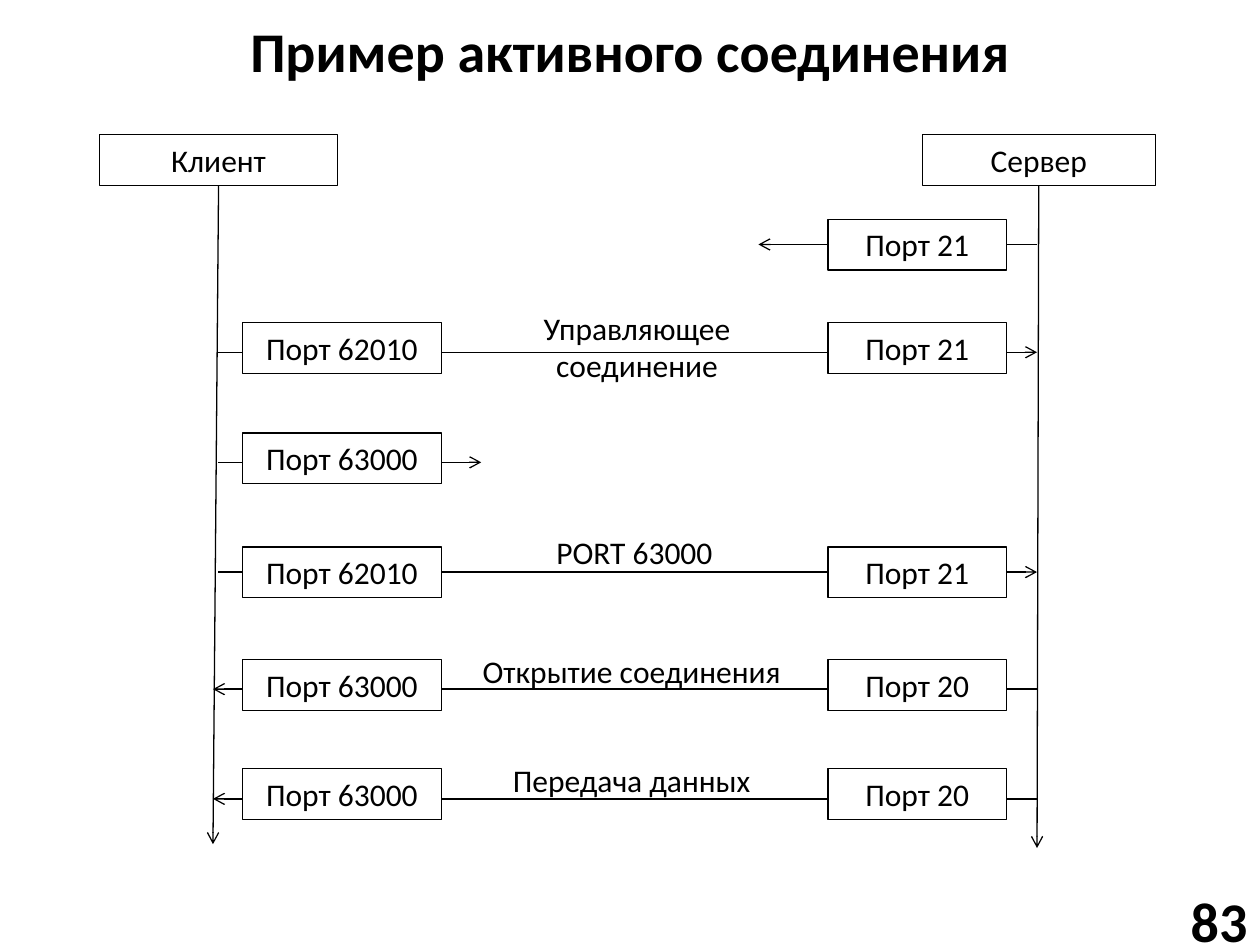
"""Build a slide with the sequence diagram of an active connection."""
from pptx import Presentation
from pptx.dml.color import RGBColor
from pptx.enum import shapes, text
from pptx.oxml import ns
from pptx.util import Pt
from lxml import etree


def color(value):
    return RGBColor.from_string(value)


class Diagram:
    font, ink, paper = "Calibri", "000000", "FFFFFF"
    size, big, weight = 18, 32, 0.75

    def __init__(self, s):
        self.s = s

    def set_text(self, sp, words, size, bold=False, align=text.PP_ALIGN.CENTER,
                 anchor=text.MSO_ANCHOR.TOP, fit=text.MSO_AUTO_SIZE.NONE):
        tf = sp.text_frame
        tf.text = words
        tf.word_wrap = True
        tf.auto_size = fit
        tf.vertical_anchor = anchor
        p = tf.paragraphs[0]
        p.alignment = align
        p.font.name, p.font.size, p.font.bold = self.font, Pt(size), bold
        p.font.color.rgb = color(self.ink)

    def title(self, words, x, y, w, h):
        sp = self.s.shapes.title
        sp.left, sp.top, sp.width, sp.height = map(Pt, (x, y, w, h))
        self.set_text(sp, words, self.big, True, anchor=text.MSO_ANCHOR.MIDDLE)

    def number(self, words, x, y, w, h):
        sp = self.s.shapes.add_textbox(*map(Pt, (x, y, w, h)))
        self.set_text(sp, words, self.big, True, text.PP_ALIGN.RIGHT, text.MSO_ANCHOR.MIDDLE)

    def label(self, words, center, y, w=212.4, h=29):
        sp = self.s.shapes.add_textbox(*map(Pt, (center - w / 2, y, w, h)))
        self.set_text(sp, words, self.size, fit=text.MSO_AUTO_SIZE.SHAPE_TO_FIT_TEXT)

    def box(self, words, x, y, w, h=29, filled=True):
        sp = self.s.shapes.add_shape(shapes.MSO_SHAPE.RECTANGLE, *map(Pt, (x, y, w, h)))
        sp.shadow.inherit = False
        if filled:
            sp.fill.solid()
            sp.fill.fore_color.rgb = color(self.paper)
        else:
            sp.fill.background()
        sp.line.color.rgb = color(self.ink)
        sp.line.width = Pt(self.weight)
        self.set_text(sp, words, self.size, fit=text.MSO_AUTO_SIZE.SHAPE_TO_FIT_TEXT)
        return sp

    def arrow(self, x1, y1, x2, y2, start=None):
        c = self.s.shapes.add_connector(shapes.MSO_CONNECTOR.STRAIGHT, *map(Pt, (x1, y1, x2, y2)))
        if start is not None:
            c.begin_connect(start, 2)
        c.line.color.rgb = color(self.ink)
        c.line.width = Pt(self.weight)
        props = c._element.spPr
        etree.SubElement(props.get_or_add_ln(), ns.qn("a:tailEnd"), type="arrow")
        etree.SubElement(props, ns.qn("a:effectLst"))


def main():
    prs = Presentation()
    prs.slide_width, prs.slide_height = Pt(720), Pt(540)
    d = Diagram(prs.slides.add_slide(prs.slide_layouts[5]))
    d.title("Пример активного соединения", 20, 3.6, 680.4, 49.7)
    d.number("83", 638, 511, 82, 29)

    client, client_end, server = 124.6, 121.7, 592.6
    lifelines = [("Клиент", 56.9, 136, client_end, 482.4),
                 ("Сервер", 527, 133.2, server, 484.6)]
    for name, x, w, end_x, end_y in lifelines:
        sp = d.box(name, x, 77, w, filled=False)
        d.arrow(x + w / 2, 106, end_x, end_y, sp)

    messages = [
        (server, 433.4, 139.7, 125.3, None, "Порт 21"),
        (client, server, 201.3, 184.3, "Порт 62010", "Порт 21"),
        (client, 275, 264.2, 247.4, "Порт 63000", None),
        (client, server, 326.9, 312.5, "Порт 62010", "Порт 21"),
        (server, client_end, 393.8, 377, "Порт 63000", "Порт 20"),
        (server, client_end, 456.5, 439.2, "Порт 63000", "Порт 20"),
    ]
    for x1, x2, y, top, client_port, server_port in messages:
        d.arrow(x1, y, x2, y)
        for port, x, w in ((client_port, 138.7, 113.5), (server_port, 473.2, 102)):
            if port:
                d.box(port, x, top, w)

    d.label("Управляющее соединение", 364, 172.8, h=51)
    d.label("PORT 63000", 362.5, 301)
    d.label("Открытие соединения", 361, 369.2)
    d.label("Передача данных", 361, 431.5)
    prs.save("out.pptx")


if __name__ == "__main__":
    main()
